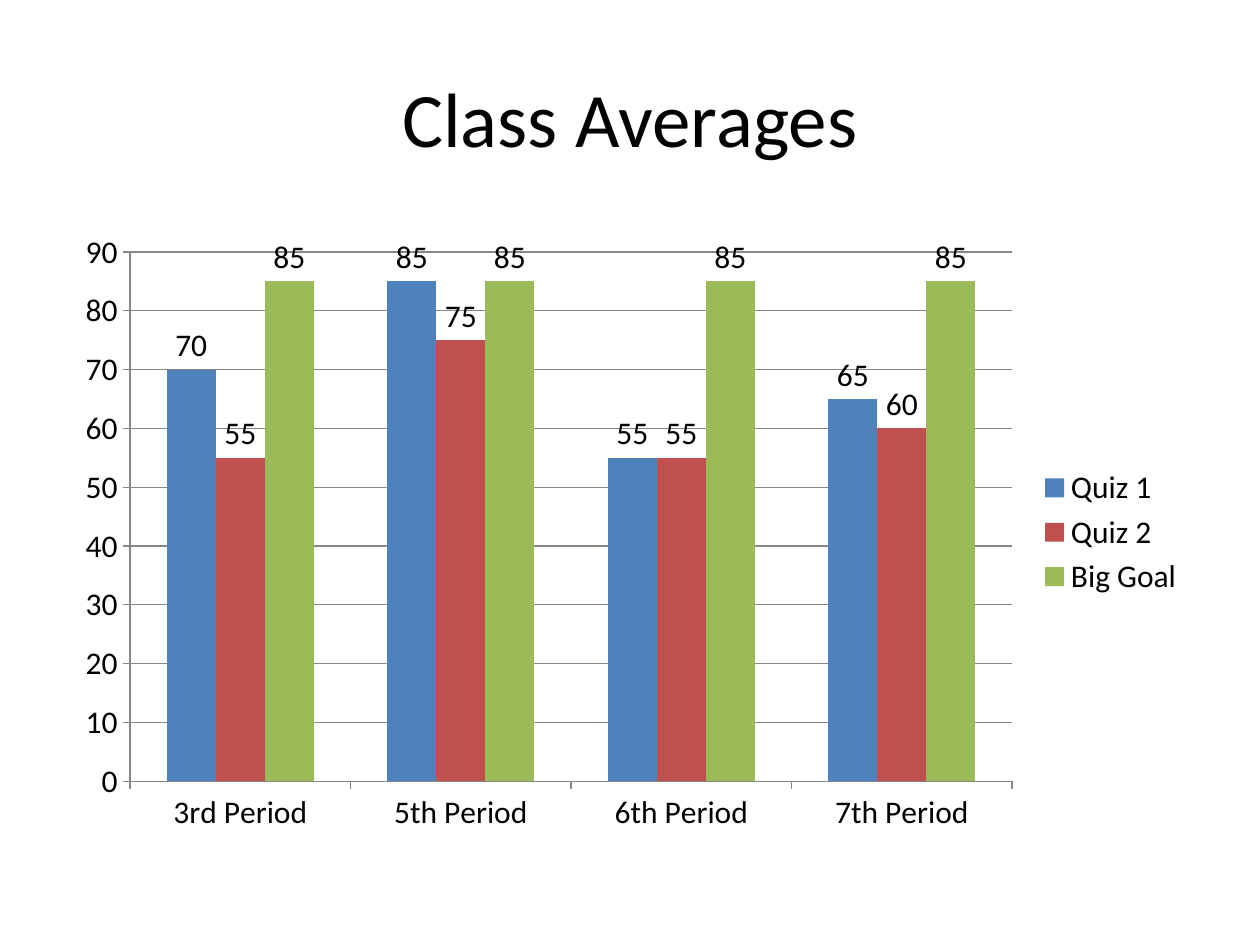
from dataclasses import dataclass

import pptx
import pptx.chart.data
import pptx.dml.color
import pptx.enum.chart
import pptx.enum.text
import pptx.util

Pt = pptx.util.Pt
RGB = pptx.dml.color.RGBColor.from_string


@dataclass(frozen=True)
class Theme:
    """Colours, typeface and type sizes of the slide."""
    font: str = "Calibri"
    ink: str = "000000"
    rule: str = "878787"
    title_size: int = 44
    chart_size: int = 18


THEME = Theme()
PERIODS = ["3rd Period", "5th Period", "6th Period", "7th Period"]
SCORES = [
    ("Quiz 1", "4F81BD", [70, 85, 55, 65]),
    ("Quiz 2", "C0504D", [55, 75, 55, 60]),
    ("Big Goal", "9BBB59", [85, 85, 85, 85]),
]


def style_font(font, size):
    """Apply the theme typeface and ink at the given size."""
    font.name = THEME.font
    font.size = Pt(size)
    font.color.rgb = RGB(THEME.ink)


def add_title(slide, left, top, width, height):
    """Place the centred heading in its box."""
    frame = slide.shapes.add_textbox(Pt(left), Pt(top), Pt(width), Pt(height)).text_frame
    frame.word_wrap = True
    frame.vertical_anchor = pptx.enum.text.MSO_ANCHOR.MIDDLE
    heading = frame.paragraphs[0]
    heading.text = "Class Averages"
    heading.alignment = pptx.enum.text.PP_ALIGN.CENTER
    style_font(heading.font, THEME.title_size)


def style_axis(axis, has_grid):
    """Draw the axis with thin rules and outside ticks."""
    axis.major_tick_mark = pptx.enum.chart.XL_TICK_MARK.OUTSIDE
    axis.minor_tick_mark = pptx.enum.chart.XL_TICK_MARK.NONE
    axis.has_major_gridlines = has_grid
    lines = [axis.format.line]
    if has_grid:
        lines.append(axis.major_gridlines.format.line)
    for line in lines:
        line.color.rgb = RGB(THEME.rule)
        line.width = Pt(0.75)


def add_averages_chart(slide, left, top, width, height):
    """Place the clustered columns of quiz averages in their box."""
    averages = pptx.chart.data.CategoryChartData(number_format="General")
    averages.categories = PERIODS
    for name, _, values in SCORES:
        averages.add_series(name, values)
    chart = slide.shapes.add_chart(
        pptx.enum.chart.XL_CHART_TYPE.COLUMN_CLUSTERED,
        Pt(left), Pt(top), Pt(width), Pt(height), averages,
    ).chart
    style_font(chart.font, THEME.chart_size)
    chart.has_title = False
    chart.has_legend = True
    chart.legend.position = pptx.enum.chart.XL_LEGEND_POSITION.RIGHT
    chart.legend.include_in_layout = False
    style_axis(chart.category_axis, False)
    style_axis(chart.value_axis, True)
    chart.value_axis.minimum_scale = 0
    chart.value_axis.maximum_scale = 90
    chart.value_axis.major_unit = 10

    plot = chart.plots[0]
    plot.vary_by_categories = False
    plot.gap_width = 150
    plot.overlap = 0
    for series, (_, color, _) in zip(plot.series, SCORES):
        series.format.fill.solid()
        series.format.fill.fore_color.rgb = RGB(color)
        series.invert_if_negative = False
        series.data_labels.show_value = True
        series.data_labels.position = pptx.enum.chart.XL_LABEL_POSITION.OUTSIDE_END


def main():
    """Build and save the slide."""
    deck = pptx.Presentation()
    deck.slide_width, deck.slide_height = Pt(720), Pt(540)
    slide = deck.slides.add_slide(deck.slide_layouts[6])
    add_title(slide, 36, 21.6, 648, 90)
    add_averages_chart(slide, 36, 126, 648, 356.4)
    deck.save("out.pptx")


if __name__ == "__main__":
    main()
